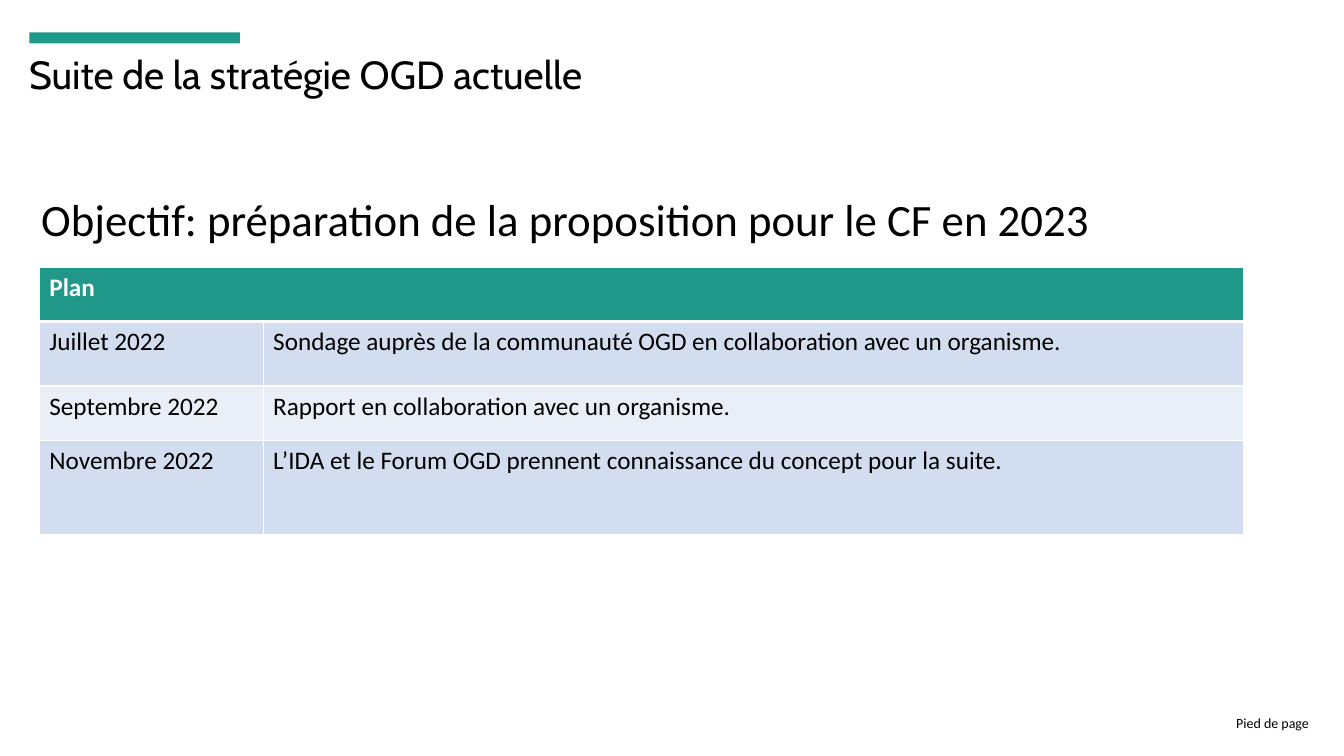
from dataclasses import dataclass

from lxml.etree import SubElement
from pptx import Presentation
from pptx.dml.color import RGBColor
from pptx.enum.shapes import MSO_SHAPE
from pptx.enum.text import MSO_ANCHOR, PP_ALIGN
from pptx.oxml.ns import qn
from pptx.util import Emu, Pt


@dataclass(frozen=True)
class Theme:
    """Colours, fonts and type sizes of the slide."""

    accent: str = "1F988A"
    dark_band: str = "D2DEEF"
    light_band: str = "EAEFF7"
    white: str = "FFFFFF"
    black: str = "000000"
    heading_font: str = "Cabin"
    body_font: str = "Calibri"
    title_size: int = 28
    objective_size: int = 32
    table_size: int = 18
    footer_size: int = 10


THEME = Theme()
PLAN = [
    ("Juillet 2022", "Sondage auprès de la communauté OGD en collaboration avec un organisme."),
    ("Septembre 2022", "Rapport en collaboration avec un organisme."),
    ("Novembre 2022", "L’IDA et le Forum OGD prennent connaissance du concept pour la suite."),
]


def px(length):
    """Turn px, at 100 to the inch, into EMU."""
    return Emu(length * 9144)


def write(frame, text, *, size, font=THEME.body_font, color=THEME.black, bold=False,
          align=PP_ALIGN.LEFT, anchor=MSO_ANCHOR.TOP, line_spacing=1.0, space_before=0):
    """Write one formatted paragraph into a text frame."""
    frame.word_wrap = True
    frame.vertical_anchor = anchor
    paragraph = frame.paragraphs[0]
    paragraph.alignment = align
    paragraph.line_spacing = line_spacing
    paragraph.space_before = Pt(space_before)
    run = paragraph.add_run()
    run.text = text
    run.font.name = font
    run.font.size = Pt(size)
    run.font.bold = bold
    run.font.color.rgb = RGBColor.from_string(color)


def add_text(slide, box, text, **style):
    """Add a text box that holds one paragraph."""
    shape = slide.shapes.add_textbox(*map(px, box))
    write(shape.text_frame, text, **style)


def add_header(slide, box):
    """Place the accent bar and the slide title."""
    left, top, width, height = box
    bar = slide.shapes.add_shape(
        MSO_SHAPE.RECTANGLE, px(left + 10), px(top), px(209), px(11))
    bar.shadow.inherit = False
    bar.fill.solid()
    bar.fill.fore_color.rgb = RGBColor.from_string(THEME.accent)
    bar.line.fill.background()
    add_text(slide, (left, top + 8, width, height - 8), "Suite de la stratégie OGD actuelle",
             size=THEME.title_size, font=THEME.heading_font,
             anchor=MSO_ANCHOR.BOTTOM, line_spacing=0.9)


def set_borders(cell, widths):
    """Draw white borders with the given widths in points."""
    properties = cell._tc.get_or_add_tcPr()
    for index, (side, width) in enumerate(widths.items()):
        line = SubElement(properties, qn(f"a:ln{side}"), w=str(Pt(width)))
        properties.insert(index, line)
        fill = SubElement(line, qn("a:solidFill"))
        SubElement(fill, qn("a:srgbClr"), val=THEME.white)


def add_plan(slide, box):
    """Place the plan table under its merged heading row."""
    left, top, width, height = box
    date_width = 222
    row_heights = (54, 64, 54, height - 172)
    rows = [("Plan", ""), *PLAN]
    table = slide.shapes.add_table(len(rows), 2, *map(px, box)).table
    table.horz_banding = False
    for column, column_width in zip(table.columns, (date_width, width - date_width)):
        column.width = px(column_width)
    for row_index, (texts, row_height) in enumerate(zip(rows, row_heights)):
        table.rows[row_index].height = px(row_height)
        heading = row_index == 0
        band = THEME.dark_band if row_index % 2 else THEME.light_band
        for cell, text in zip(table.rows[row_index].cells, texts):
            cell.fill.solid()
            cell.fill.fore_color.rgb = RGBColor.from_string(THEME.accent if heading else band)
            set_borders(cell, {"L": 1, "R": 1, "T": 3 if row_index == 1 else 1,
                               "B": 3 if heading else 1})
            if text:
                write(cell.text_frame, text, size=THEME.table_size, bold=heading,
                      color=THEME.white if heading else THEME.black)
    table.cell(0, 0).merge(table.cell(0, 1))


def add_body(slide, box):
    """Place the objective and the plan table."""
    left, top, width, height = box
    add_text(slide, (left, top, width, height),
             "Objectif: préparation de la proposition pour le CF en 2023",
             size=THEME.objective_size, line_spacing=0.9, space_before=10)
    add_plan(slide, (left + 8, top + 74, width - 48, 265))


def add_footer(slide, box):
    """Place the right-aligned footer."""
    add_text(slide, box, "Pied de page", size=THEME.footer_size, align=PP_ALIGN.RIGHT)


def main():
    """Build and save the presentation."""
    presentation = Presentation()
    presentation.slide_width, presentation.slide_height = px(1333), px(750)
    slide = presentation.slides.add_slide(presentation.slide_layouts[6])
    add_header(slide, (19, 32, 1288, 70))
    add_body(slide, (31, 191, 1242, 450))
    add_footer(slide, (898, 704, 410, 27))
    presentation.save("out.pptx")


if __name__ == "__main__":
    main()
